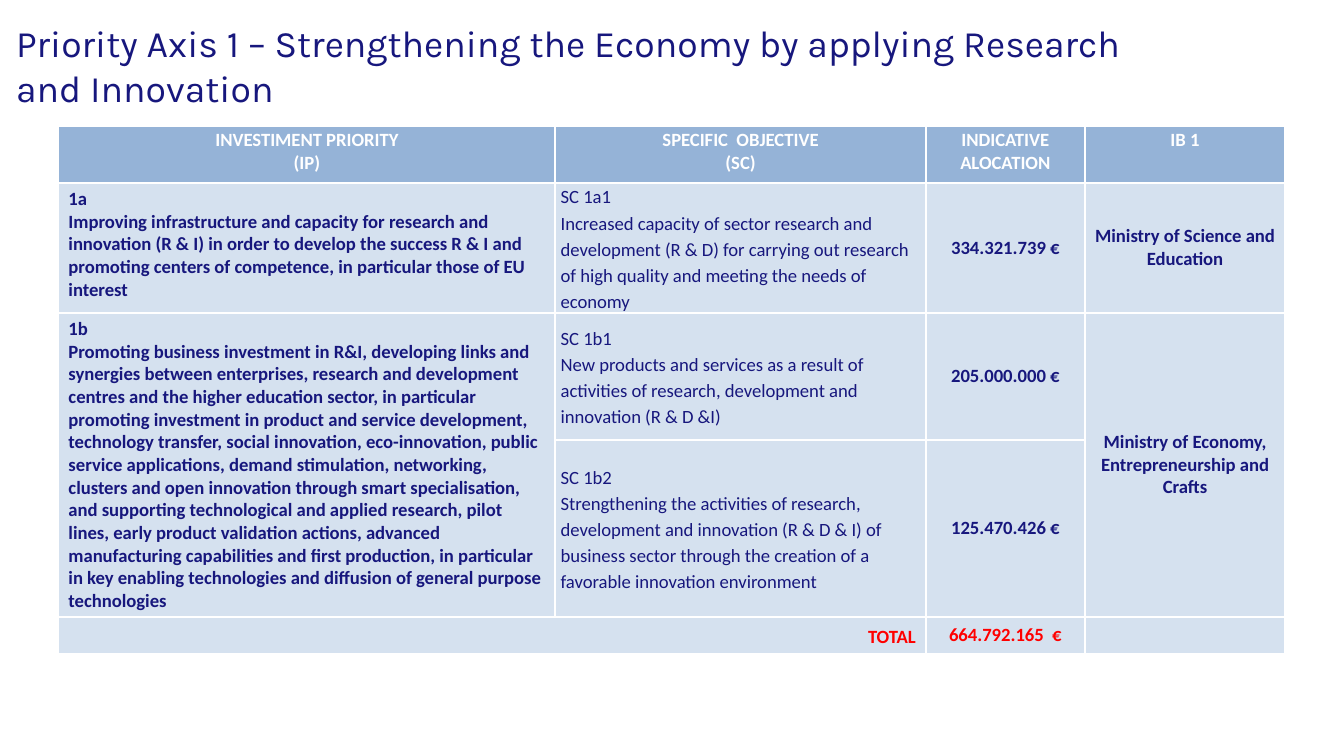
from lxml.etree import SubElement
from pptx import Presentation
from pptx.dml.color import RGBColor
from pptx.enum.text import MSO_ANCHOR, PP_ALIGN
from pptx.oxml.ns import qn
from pptx.util import Pt

HUES = {"navy": "17177D", "head": "95B3D7", "body": "B9CDE5", "white": "FFFFFF", "red": "FF0000"}
WIDE = {"margin_left": Pt(5.4), "margin_right": Pt(5.4), "margin_top": Pt(2.7), "margin_bottom": Pt(2.7)}
SLIM = {"margin_left": Pt(2.9), "margin_right": Pt(2.9), "margin_top": 0, "margin_bottom": 0}
MID = {"vertical_anchor": MSO_ANCHOR.MIDDLE}
CENTER = {"alignment": PP_ALIGN.CENTER}
LOOSE = {"line_spacing": 1.15}
BOLD = {"name": "Calibri", "size": Pt(10), "bold": True}

HEAD = {"cell": WIDE, "para": CENTER, "font": BOLD, "hue": "white", "fill": "head"}
GOAL = {"cell": WIDE, "para": {}, "font": BOLD, "hue": "navy", "fill": "body"}
AIM = {**GOAL, "cell": {**SLIM, **MID}, "para": LOOSE, "font": {**BOLD, "bold": False}}
FACT = {**GOAL, "cell": {**WIDE, **MID}, "para": CENTER}
SUM = {**FACT, "hue": "red"}
TOTAL = {**SUM, "para": {**LOOSE, "alignment": PP_ALIGN.RIGHT}}

COLS = [266.2, 198.5, 85.2, 107.4]
ROWS = [31.5, 69.7, 68, 94.8, 19.6]
SPANS = [((2, 0), (3, 0)), ((2, 3), (3, 3)), ((4, 0), (4, 1))]
LOOKS = [[HEAD] * 4] + [[GOAL, AIM, FACT, FACT]] * 3 + [[TOTAL, TOTAL, SUM, FACT]]
TEXTS = [
    [["INVESTIMENT PRIORITY", "(IP)"], ["SPECIFIC  OBJECTIVE", "(SC)"], ["INDICATIVE ALOCATION"], ["IB 1"]],
    [["1a", "Improving infrastructure and capacity for research and innovation (R & I) in order to "
      "develop the success R & I and promoting centers of competence, in particular those of EU interest"],
     ["SC 1a1", "Increased capacity of sector research and development (R & D) for carrying out "
      "research of high quality and meeting the needs of economy"],
     ["334.321.739 €"], ["Ministry of Science and Education"]],
    [["1b", "Promoting business investment in R&I, developing links and synergies between enterprises, "
      "research and development centres and the higher education sector, in particular promoting "
      "investment in product and service development, technology transfer, social innovation, "
      "eco-innovation, public service applications, demand stimulation, networking, clusters and open "
      "innovation through smart specialisation, and supporting technological and applied research, pilot "
      "lines, early product validation actions, advanced manufacturing capabilities and first production, "
      "in particular in key enabling technologies and diffusion of general purpose technologies"],
     ["SC 1b1", "New products and services as a result of activities of research, development and "
      "innovation (R & D &I)"],
     ["205.000.000 €"], ["Ministry of Economy, Entrepreneurship and Crafts"]],
    [[],
     ["SC 1b2", "Strengthening the activities of research, development and innovation (R & D & I) of "
      "business sector through the creation of a favorable innovation environment"],
     ["125.470.426 €"], []],
    [["TOTAL"], [], ["664.792.165  €"], []],
]


class Deck:
    """Draws styled elements on the current slide."""

    def __init__(self, width, height):
        self.file = Presentation()
        self.file.slide_width, self.file.slide_height = Pt(width), Pt(height)
        self.slide = self.file.slides.add_slide(self.file.slide_layouts[6])

    def apply(self, target, values):
        for name, value in values.items():
            setattr(target, name, value)

    def text(self, frame, lines, para, font, hue):
        for i, line in enumerate(lines):
            item = frame.add_paragraph() if i else frame.paragraphs[0]
            self.apply(item, para)
            run = item.add_run()
            run.text = line
            self.apply(run.font, font)
            run.font.color.rgb = RGBColor.from_string(HUES[hue])
        if not lines:
            SubElement(frame.paragraphs[0]._p, qn("a:endParaRPr"), sz=str(int(font["size"].pt * 100)))

    def title(self, text, left, top, width, height):
        frame = self.slide.shapes.add_textbox(Pt(left), Pt(top), Pt(width), Pt(height)).text_frame
        self.apply(frame, {**dict.fromkeys(WIDE, 0), "word_wrap": True})
        self.text(frame, [text], {}, {"name": "Karla", "size": Pt(20)}, "navy")

    def border(self, cell, top):
        props = cell._tc.get_or_add_tcPr()
        for i, (side, size) in enumerate(zip("LRTB", (1, 1, top, 1))):
            line = SubElement(props, qn(f"a:ln{side}"), w=str(Pt(size)))
            SubElement(SubElement(line, qn("a:solidFill")), qn("a:srgbClr"), val=HUES["white"])
            props.insert(i, line)

    def cell(self, cell, lines, look, top):
        self.apply(cell, look["cell"])
        self.text(cell.text_frame, lines, look["para"], look["font"], look["hue"])
        cell.fill.solid()
        cell.fill.fore_color.rgb = RGBColor.from_string(HUES[look["fill"]])
        if look["fill"] == "body":
            color = cell._tc.tcPr.find(".//" + qn("a:srgbClr"))
            SubElement(color, qn("a:alpha"), val="60000")
        self.border(cell, top)

    def table(self, left, top):
        shape = self.slide.shapes.add_table(
            len(ROWS), len(COLS), Pt(left), Pt(top), Pt(sum(COLS)), Pt(sum(ROWS)))
        grid = shape.table
        for col, width in zip(grid.columns, COLS):
            col.width = Pt(width)
        for row, height in zip(grid.rows, ROWS):
            row.height = Pt(height)
        for first, last in SPANS:
            grid.cell(*first).merge(grid.cell(*last))
        for r, (texts, looks) in enumerate(zip(TEXTS, LOOKS)):
            for c, (lines, look) in enumerate(zip(texts, looks)):
                self.cell(grid.cell(r, c), lines, look, 1 if r else 3)


def main():
    deck = Deck(720, 405)
    deck.title("Priority Axis 1 – Strengthening the Economy by applying Research and Innovation",
               8.6, 11, 603.4, 35)
    deck.table(31.3, 66.5)
    deck.file.save("out.pptx")


if __name__ == "__main__":
    main()
